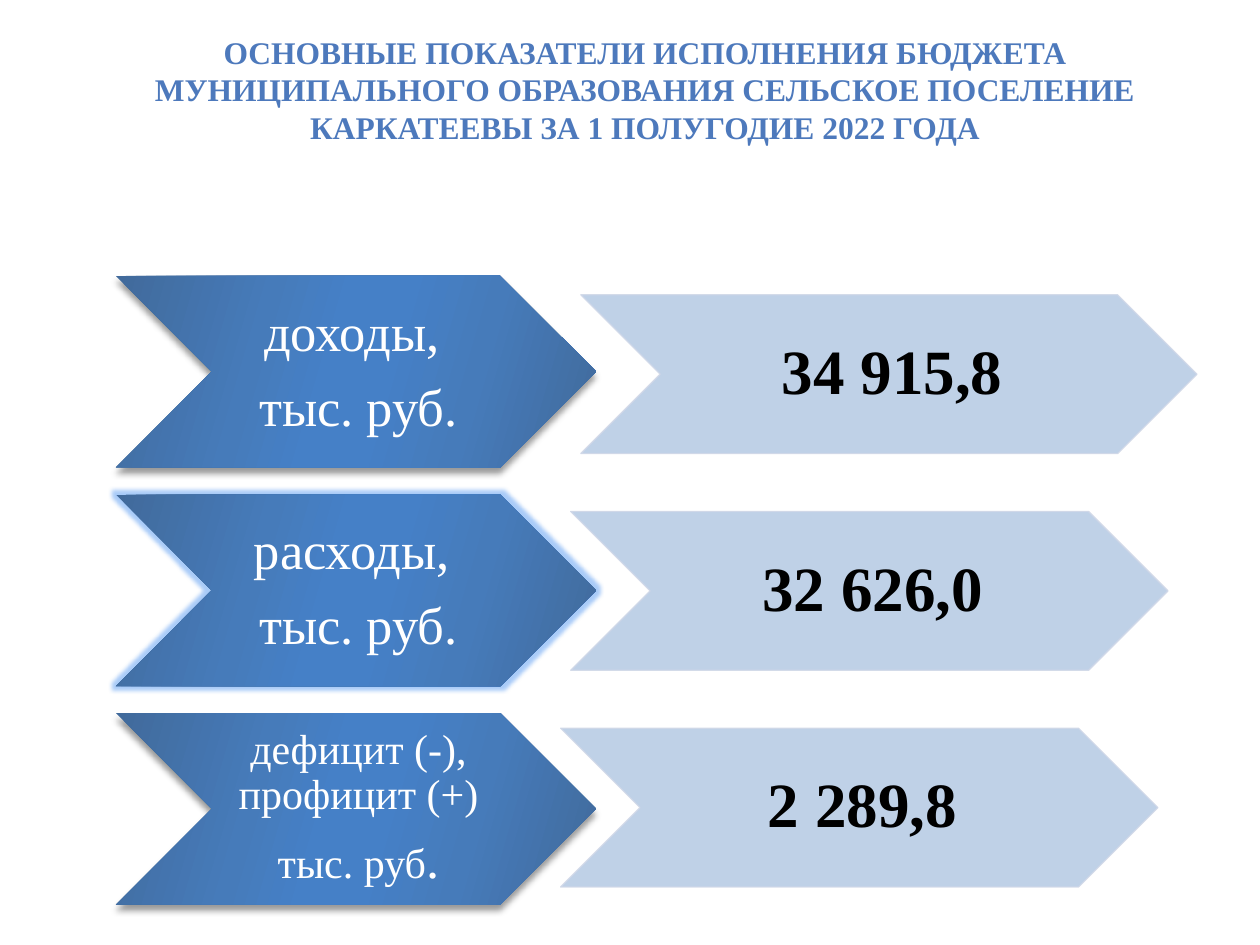
from dataclasses import dataclass

from lxml.etree import SubElement
from pptx import Presentation
from pptx.dml.color import RGBColor as RGB
from pptx.enum.shapes import MSO_SHAPE as Preset
from pptx.enum.text import MSO_ANCHOR as Anchor, PP_ALIGN as Align
from pptx.oxml.ns import qn
from pptx.util import Inches, Pt


@dataclass(frozen=True)
class Theme:
    face: str = "Times New Roman"
    title: str = "4D79BC"
    pale: str = "B9CDE5"
    edge: str = "D0D8E8"
    white: str = "FFFFFF"
    black: str = "000000"
    glow: str = "408CF0"
    stops: tuple = ((0, "416A9B"), (30, "467BBA"), (45, "4580C7"),
                    (55, "4580C7"), (73, "467BBA"), (100, "416A9B"))
    head: int = 18
    label: int = 30
    small: int = 24
    value: int = 36


@dataclass(frozen=True)
class Row:
    lines: tuple  # paragraphs, each a tuple of (text, size) runs
    value: str
    width: float
    glow: bool = False


T = Theme()
UNIT = "тыс. руб."
ROWS = (
    Row(((("доходы, ", T.label),), ((UNIT, T.label),)), "34 915,8", 4.89),
    Row(((("расходы, ", T.label),), ((UNIT, T.label),)), "32 626,0", 4.74, True),
    Row(((("дефицит (-), профицит (+)", T.small),),
         (("тыс. руб", T.small), (".", T.label))), "2 289,8", 4.74),
)
TITLE = ("ОСНОВНЫЕ ПОКАЗАТЕЛИ ИСПОЛНЕНИЯ БЮДЖЕТА МУНИЦИПАЛЬНОГО ОБРАЗОВАНИЯ "
         "СЕЛЬСКОЕ ПОСЕЛЕНИЕ КАРКАТЕЕВЫ ЗА 1 ПОЛУГОДИЕ 2022 ГОДА")


def apply(obj, form: dict) -> None:
    for name, val in form.items():
        setattr(obj, name, val)


def add_color(node, tone: str, alpha: int = 100) -> None:
    clr = SubElement(node, qn("a:srgbClr"), val=tone)
    if alpha < 100:
        SubElement(clr, qn("a:alpha"), val=str(alpha * 1000))


def fade(node, alpha: int) -> None:
    """Make every colour below the node partly transparent."""
    for clr in node.iter(qn("a:srgbClr")):
        SubElement(clr, qn("a:alpha"), val=str(alpha * 1000))


def write(frame, lines: tuple, tone: str, bold: bool = False) -> None:
    for i, runs in enumerate(lines):
        para = frame.paragraphs[0] if i == 0 else frame.add_paragraph()
        para.alignment = Align.CENTER
        for text, size in runs:
            run = para.add_run()
            run.text = text
            apply(run.font, {"name": T.face, "size": Pt(size), "bold": bold})
            run.font.color.rgb = RGB.from_string(tone)


def chevron(slide, box: tuple, lines: tuple, tone: str, pad: tuple, bold: bool = False):
    shape = slide.shapes.add_shape(Preset.CHEVRON, *map(Inches, box))
    shape.shadow.inherit = False
    side, rim = map(Inches, pad)
    frame = shape.text_frame
    apply(frame, {"word_wrap": True, "vertical_anchor": Anchor.MIDDLE,
                  "margin_left": side, "margin_right": 0,
                  "margin_top": rim, "margin_bottom": rim})
    write(frame, lines, tone, bold)
    for para in frame.paragraphs:
        para.line_spacing = 0.9
        after = SubElement(para._p.get_or_add_pPr(), qn("a:spcAft"))
        SubElement(after, qn("a:spcPct"), val="35000")
    return shape


def paint_dark(shape, glow: bool) -> None:
    shape.line.fill.background()
    shape.fill.gradient()
    shape.fill.gradient_angle = 360 - 16
    props = shape._element.spPr
    stops = props.find(".//" + qn("a:gsLst"))
    stops[:] = []
    for pos, tone in T.stops:
        add_color(SubElement(stops, qn("a:gs"), pos=str(pos * 1000)), tone)
    effects = props.find(qn("a:effectLst"))
    if glow:
        add_color(SubElement(effects, qn("a:glow"), rad=str(Pt(5))), T.glow, 45)
    else:
        cast = SubElement(effects, qn("a:outerShdw"), blurRad=str(Pt(4)),
                          dist=str(Pt(3.4)), dir="5400000", rotWithShape="0")
        add_color(cast, T.black, 40)


def paint_pale(shape) -> None:
    shape.fill.solid()
    shape.fill.fore_color.rgb = RGB.from_string(T.pale)
    shape.line.color.rgb = RGB.from_string(T.edge)
    shape.line.width = Pt(0.75)
    fade(shape._element.spPr, 90)


def draw_row(slide, i: int, row: Row) -> None:
    dark = chevron(slide, (0.92, 2.19 + 1.735 * i, 3.81, 1.52),
                   row.lines, T.white, (0.04, 0.02))
    paint_dark(dark, row.glow)
    pale = chevron(slide, (4.61 - 0.08 * i, 2.34 + 1.72 * i, row.width, 1.26),
                   (((row.value, T.value),),), T.black, (0.05, 0.03), True)
    paint_pale(pale)


def main() -> None:
    deck = Presentation()
    apply(deck, {"slide_width": Inches(10), "slide_height": Inches(7.5)})
    slide = deck.slides.add_slide(deck.slide_layouts[6])

    # Label and value chevrons
    for i, row in enumerate(ROWS):
        draw_row(slide, i, row)

    # Title
    box = slide.shapes.add_textbox(*map(Inches, (0.67, 0.21, 8.9, 1.01)))
    box.text_frame.word_wrap = True
    write(box.text_frame, (((TITLE, T.head),),), T.title, True)

    deck.save("out.pptx")


if __name__ == "__main__":
    main()
